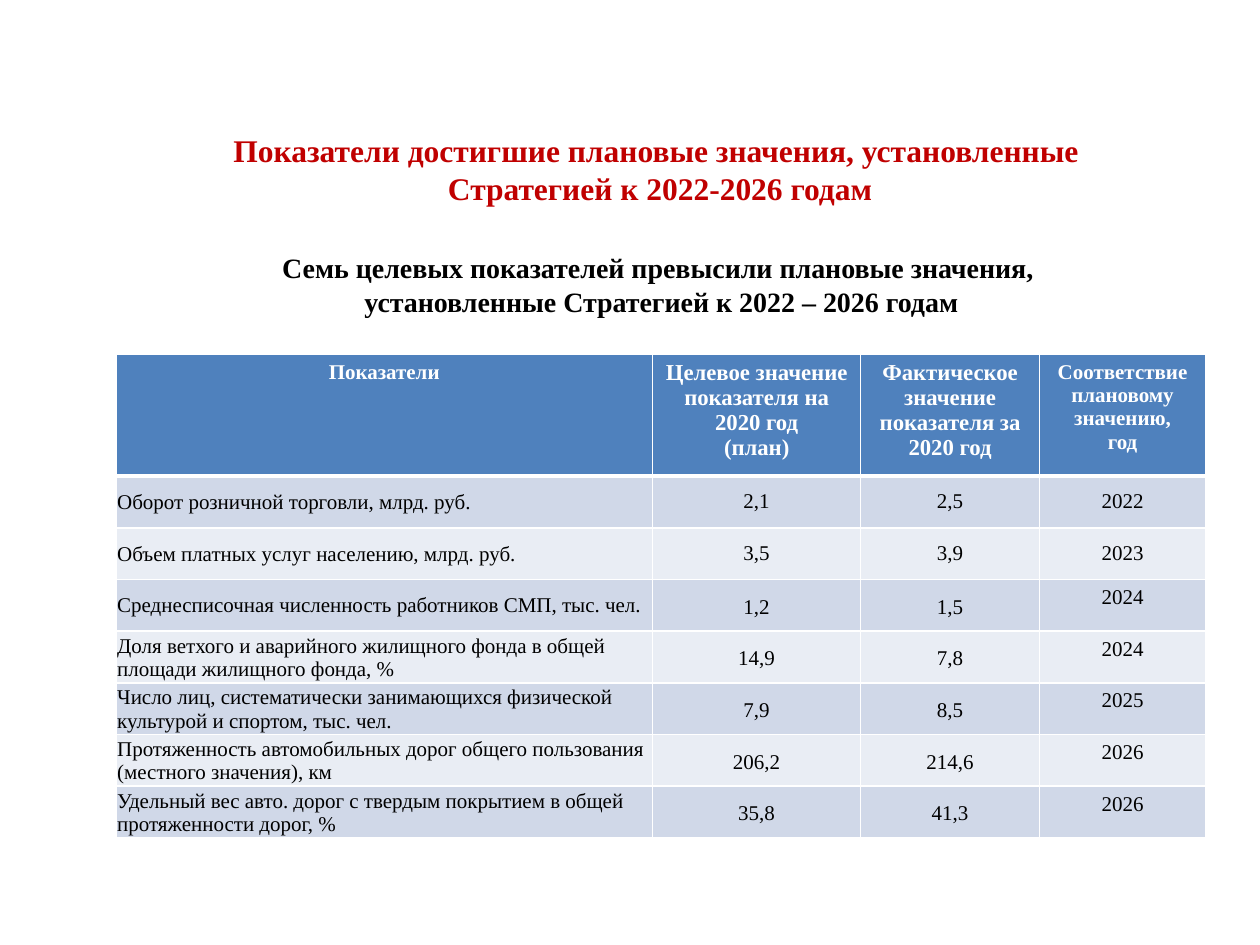
import pptx
import pptx.util
import pptx.dml.color
import pptx.enum.text
import pptx.oxml
import pptx.oxml.ns

WIDTH = pptx.util.Inches(10)
HEIGHT = pptx.util.Inches(7.5)
FONT = "Times New Roman"
CENTER = pptx.enum.text.PP_ALIGN.CENTER
LEFT = pptx.enum.text.PP_ALIGN.LEFT
MIDDLE = pptx.enum.text.MSO_ANCHOR.MIDDLE
COLUMNS = [42.6, 16.5, 14.2, 13.2]
HEADER_HEIGHT = 12.8
ROW_HEIGHT = 5.47
BANDS = ["D0D8E8", "E9EDF4"]
HEADERS = [
    (["Показатели"], 12),
    (["Целевое значение показателя на 2020 год", "(план)"], 13),
    (["Фактическое значение показателя за 2020 год"], 13),
    (["Соответствие плановому значению,", "год"], 12),
]
INDICATORS = [
    ("Оборот розничной торговли, млрд. руб.", "2,1", "2,5", "2022"),
    ("Объем платных услуг населению, млрд. руб.", "3,5", "3,9", "2023"),
    ("Среднесписочная численность работников СМП, тыс. чел.", "1,2", "1,5", "2024"),
    ("Доля ветхого и аварийного жилищного фонда в общей площади жилищного фонда, %",
     "14,9", "7,8", "2024"),
    ("Число лиц, систематически занимающихся физической культурой и спортом, тыс. чел.",
     "7,9", "8,5", "2025"),
    ("Протяженность автомобильных дорог общего пользования (местного значения), км",
     "206,2", "214,6", "2026"),
    ("Удельный вес авто. дорог с твердым покрытием в общей протяженности дорог, %",
     "35,8", "41,3", "2026"),
]


def across(percent):
    return round(WIDTH * percent / 100)


def down(percent):
    return round(HEIGHT * percent / 100)


def color(value):
    return pptx.dml.color.RGBColor.from_string(value)


def write(tf, lines, size, text_color, bold=False, align=CENTER, spacing=None):
    tf.word_wrap = True
    for i, line in enumerate(lines):
        p = tf.add_paragraph() if i else tf.paragraphs[0]
        p.alignment = align
        if spacing:
            p.line_spacing = spacing
        r = p.add_run()
        r.text = line
        r.font.name = FONT
        r.font.size = pptx.util.Pt(size)
        r.font.bold = bold
        r.font.color.rgb = color(text_color)


def add_heading(s, x, y, w, h, lines, size, text_color):
    sp = s.shapes.add_textbox(across(x), down(y), across(w), down(h))
    write(sp.text_frame, lines, size, text_color, bold=True)


def style_cell(cell, fill, top=1, bottom=1):
    tcPr = cell._tc.get_or_add_tcPr()
    for side, width in zip("LRTB", (1, 1, top, bottom)):
        tcPr.append(pptx.oxml.parse_xml(
            f'<a:ln{side} {pptx.oxml.ns.nsdecls("a")} w="{pptx.util.Pt(width)}">'
            f'<a:solidFill><a:srgbClr val="FFFFFF"/></a:solidFill></a:ln{side}>'))
    cell.fill.solid()
    cell.fill.fore_color.rgb = color(fill)


def set_margins(cell, side, top):
    cell.vertical_anchor = MIDDLE
    cell.margin_left = cell.margin_right = pptx.util.Inches(side)
    cell.margin_top = pptx.util.Inches(top)
    cell.margin_bottom = 0


def fill_row(table, row, values):
    monetary = row <= 2
    for col, value in enumerate(values):
        cell = table.cell(row, col)
        style_cell(cell, BANDS[(row - 1) % 2], top=3 if row == 1 else 1)
        if col == 0:
            set_margins(cell, 0.01, 0.01)
        elif monetary:
            set_margins(cell, 0.07, 0)
        elif col < 3:
            set_margins(cell, 0.04, 0)
        spacing = 1.15 if col in (1, 2) and not monetary else None
        write(cell.text_frame, [value], 12, "000000",
              align=CENTER if col else LEFT, spacing=spacing)


def add_indicator_table(s, x, y):
    rows = len(INDICATORS)
    table = s.shapes.add_table(
        rows + 1, len(COLUMNS), across(x), down(y), across(sum(COLUMNS)),
        down(HEADER_HEIGHT + rows * ROW_HEIGHT)).table
    for column, share in zip(table.columns, COLUMNS):
        column.width = across(share)
    for i, row in enumerate(table.rows):
        row.height = down(ROW_HEIGHT if i else HEADER_HEIGHT)
    for col, (lines, size) in enumerate(HEADERS):
        cell = table.cell(0, col)
        style_cell(cell, "4F81BD", bottom=3)
        write(cell.text_frame, lines, size, "FFFFFF", bold=True)
    for row, values in enumerate(INDICATORS, 1):
        fill_row(table, row, values)


def main():
    prs = pptx.Presentation()
    prs.slide_width, prs.slide_height = WIDTH, HEIGHT
    s = prs.slides.add_slide(prs.slide_layouts[6])
    add_heading(s, 5.1, 13.2, 94.6, 9.47,
                ["Показатели достигшие плановые значения, установленные ",
                 "Стратегией к 2022-2026 годам"], 18, "C00000")
    add_indicator_table(s, 9.2, 37.47)
    add_heading(s, 7.6, 25.87, 89.8, 8.53,
                ["Семь целевых показателей превысили плановые значения, ",
                 "установленные Стратегией к 2022 – 2026 годам"], 16, "000000")
    prs.save("out.pptx")


if __name__ == "__main__":
    main()
